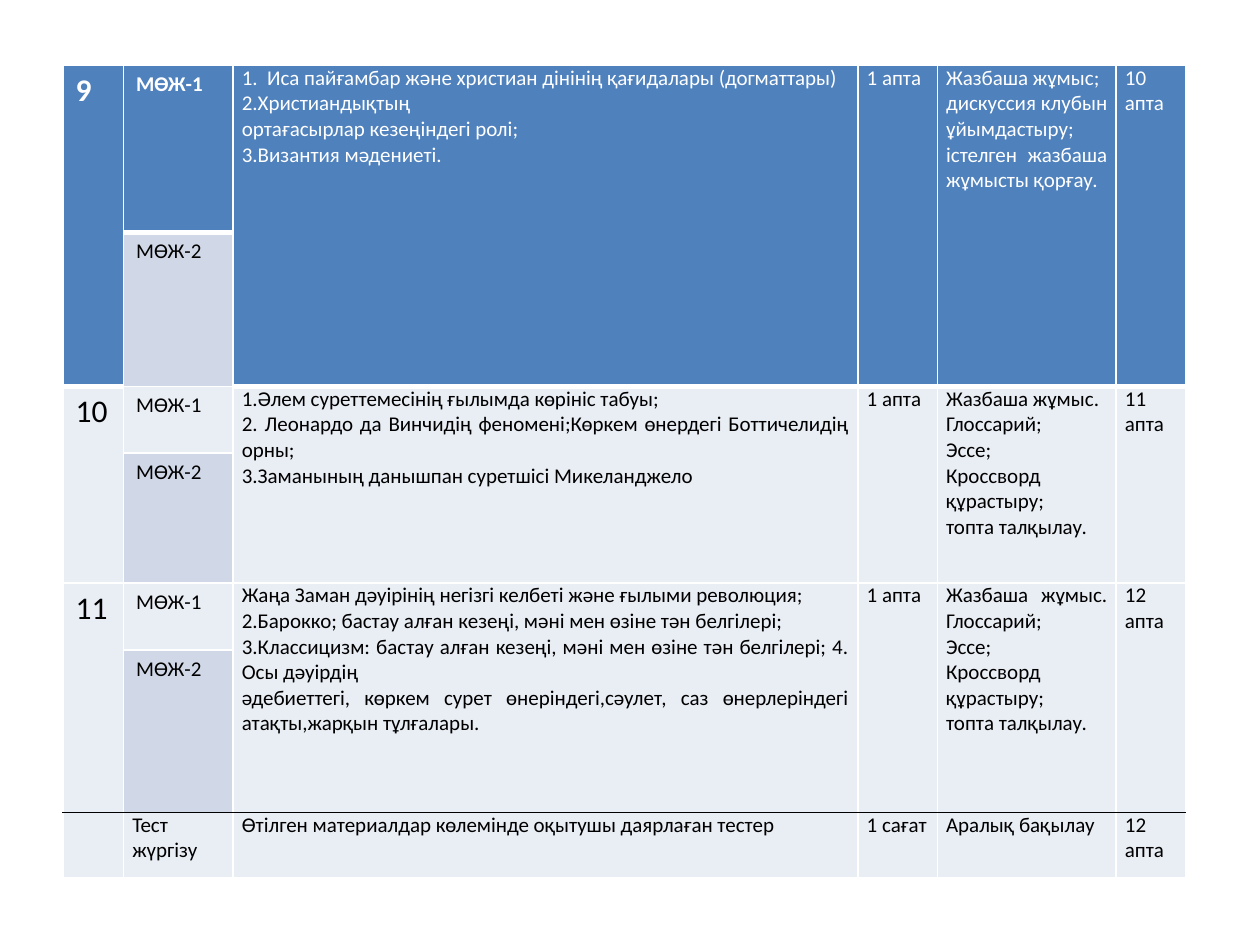
from dataclasses import dataclass

from lxml import etree
from pptx import Presentation
from pptx import util as u
from pptx.dml.color import RGBColor
from pptx.enum import text
from pptx.oxml.ns import qn

WHITE, BLACK = "FFFFFF", "000000"
BLUE, PALE, MID = "4F81BD", "E9EDF4", "D0D8E8"
COLS = [34.6, 62.6, 357.1, 45.4, 102.2, 39.6]
ROWS = [95.6, 87.8, 38.2, 74.2, 38.2, 92.9, 37.4]


@dataclass
class Week:
    number: str
    topics: list[str]
    duration: str
    tasks: list[str]
    deadline: str
    fill: str = PALE
    color: str = BLACK
    bold: bool = False


@dataclass
class Entry:
    row: int
    col: int
    lines: list[str]
    fill: str = PALE
    color: str = BLACK
    size: int = 12
    bold: bool = False
    span: int = 1
    body: bool = True


WEEKS = [
    Week("9",
         ["1.  Иса пайғамбар және христиан дінінің қағидалары (догматтары)",
          "2.Христиандықтың",
          "ортағасырлар кезеңіндегі ролі;",
          "3.Византия мәдениеті."],
         "1 апта",
         ["Жазбаша жұмыс;", "дискуссия клубын ұйымдастыру;",
          "істелген жазбаша жұмысты қорғау."],
         "10 апта", BLUE, WHITE, True),
    Week("10",
         ["1.Әлем суреттемесінің ғылымда көрініс табуы;",
          "2. Леонардо да Винчидің феномені;Көркем өнердегі Боттичелидің орны;",
          "3.Заманының данышпан суретшісі Микеланджело"],
         "1 апта",
         ["Жазбаша жұмыс.", "Глоссарий;", "Эссе;", "Кроссворд құрастыру;",
          "топта талқылау."],
         "11 апта"),
    Week("11",
         ["Жаңа Заман дәуірінің негізгі келбеті және ғылыми революция;",
          "2.Барокко; бастау алған кезеңі, мәні мен өзіне тән белгілері;",
          "3.Классицизм: бастау алған кезеңі, мәні мен өзіне тән белгілері; "
          "4. Осы дәуірдің",
          "әдебиеттегі, көркем сурет өнеріндегі,сәулет, саз өнерлеріндегі "
          "атақты,жарқын тұлғалары."],
         "1 апта",
         ["Жазбаша жұмыс. Глоссарий;", "Эссе;", "Кроссворд құрастыру;",
          "топта талқылау."],
         "12 апта"),
]
TEST = ["", "Тест жүргізу",
        "Өтілген материалдар көлемінде оқытушы даярлаған тестер",
        "1 сағат", "Аралық бақылау", "12 апта"]


def rgb(value: str) -> RGBColor:
    return RGBColor.from_string(value)


def week_entries(row: int, week: Week) -> list[Entry]:
    look = {"fill": week.fill, "color": week.color}
    body = [week.topics, [week.duration], week.tasks, [week.deadline]]
    return [
        Entry(row, 0, [week.number], size=18, bold=week.bold, span=2,
              body=False, **look),
        Entry(row, 1, ["МӨЖ-1"], bold=week.bold, body=False, **look),
        Entry(row + 1, 1, ["МӨЖ-2"], fill=MID, body=False),
        *(Entry(row, col, lines, span=2, **look)
          for col, lines in enumerate(body, 2)),
    ]


def rule_below(row: int, col: int) -> tuple[str, int]:
    if row == 5:
        return BLACK, 1
    heavy = row == 0 or (row == 1 and col != 1)
    return WHITE, 3 if heavy else 1


def add_border(cell, side: str, color: str, width: float) -> None:
    tc_pr = cell._tc.get_or_add_tcPr()
    ln = etree.SubElement(tc_pr, qn(f"a:ln{side}"), w=str(u.Pt(width)))
    fill = etree.SubElement(ln, qn("a:solidFill"))
    etree.SubElement(fill, qn("a:srgbClr"), val=color)


def draw_entry(table, entry: Entry) -> None:
    cell = table.cell(entry.row, entry.col)
    last = entry.row + entry.span - 1
    if entry.span > 1:
        cell.merge(table.cell(last, entry.col))
    borders = {
        "L": (WHITE, 1),
        "R": (WHITE, 1),
        "T": rule_below(entry.row - 1, entry.col),
        "B": rule_below(last, entry.col),
    }
    for side, (color, width) in borders.items():
        add_border(cell, side, color, width)
    cell.fill.solid()
    cell.fill.fore_color.rgb = rgb(entry.fill)
    if entry.body:
        margins = {"margin_left": 5, "margin_right": 5,
                   "margin_top": 0, "margin_bottom": 0}
        for name, value in margins.items():
            setattr(cell, name, u.Pt(value))
    font = {"name": "Calibri", "size": u.Pt(entry.size), "bold": entry.bold}
    tf = cell.text_frame
    for i, line in enumerate(entry.lines):
        p = tf.add_paragraph() if i else tf.paragraphs[0]
        if entry.body:
            p.alignment = text.PP_ALIGN.JUSTIFY
        if not line:
            continue
        r = p.add_run()
        r.text = line
        for name, value in font.items():
            setattr(r.font, name, value)
        r.font.color.rgb = rgb(entry.color)


def main() -> None:
    prs = Presentation()
    prs.slide_width, prs.slide_height = u.Pt(720), u.Pt(540)
    s = prs.slides.add_slide(prs.slide_layouts[6])
    table = s.shapes.add_table(
        len(ROWS), len(COLS), u.Pt(36), u.Pt(37.4),
        u.Pt(sum(COLS)), u.Pt(sum(ROWS))).table
    for column, width in zip(table.columns, COLS):
        column.width = u.Pt(width)
    for row, height in zip(table.rows, ROWS):
        row.height = u.Pt(height)
    entries = [e for i, week in enumerate(WEEKS)
               for e in week_entries(2 * i, week)]
    entries += [Entry(len(ROWS) - 1, col, [line], body=col > 0)
                for col, line in enumerate(TEST)]
    for entry in entries:
        draw_entry(table, entry)
    prs.save("out.pptx")


if __name__ == "__main__":
    main()
